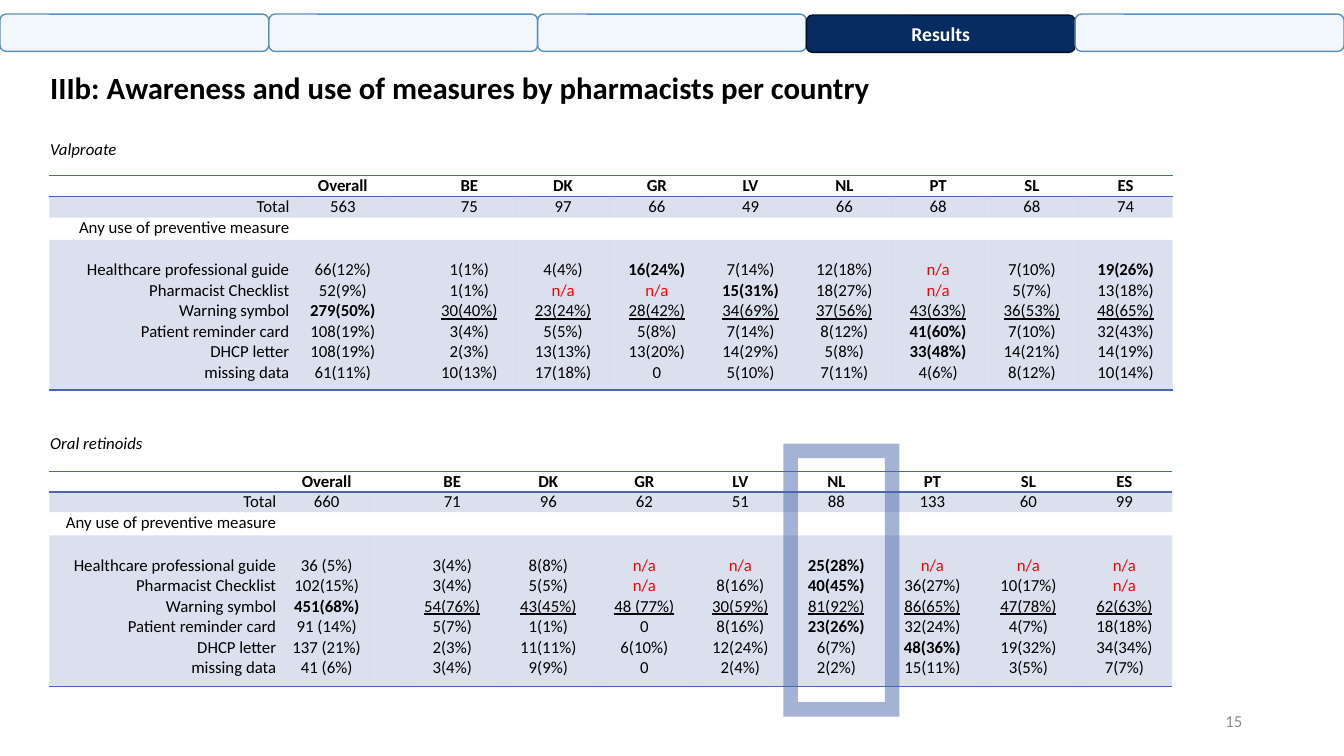
from dataclasses import dataclass
from lxml import etree
from pptx import Presentation
from pptx.dml.color import RGBColor
from pptx.enum.shapes import MSO_SHAPE
from pptx.enum.text import MSO_ANCHOR, PP_ALIGN
from pptx.oxml.ns import qn
from pptx.util import Inches, Pt

LEFT, CENTER, RIGHT = PP_ALIGN.LEFT, PP_ALIGN.CENTER, PP_ALIGN.RIGHT
TOP, MIDDLE = MSO_ANCHOR.TOP, MSO_ANCHOR.MIDDLE
ROUNDED, FRAME = MSO_SHAPE.ROUNDED_RECTANGLE, MSO_SHAPE.FRAME

TITLE = "IIIb: Awareness and use of measures by pharmacists per country"
PAGE = "15"
TABS = ["", "", "", "Results", ""]
GROUPS = ["Overall", "BE", "DK", "GR", "LV", "NL", "PT", "SL", "ES"]
MEASURES = ["Healthcare professional guide", "Pharmacist Checklist", "Warning symbol",
            "Patient reminder card", "DHCP letter", "missing data"]
TOTAL_LABEL, USE_LABEL = "Total", "Any use of preventive measure"
MOST_USED = "Warning symbol"
MISSING = "n/a"
BOLD_MARK = "*"

MEDICINES = [
    {
        "name": "Valproate", "caption_top": 1.33, "table_top": 1.74,
        "lead_columns": [2.45, 0.92, 0.33], "rows": [0.21, 0.21, 0.22, 1.49],
        "totals": ["563", "75", "97", "66", "49", "66", "68", "68", "74"],
        "use": [
            ["66(12%)", "1(1%)", "4(4%)", "*16(24%)", "7(14%)", "12(18%)", "n/a", "7(10%)", "*19(26%)"],
            ["52(9%)", "1(1%)", "n/a", "n/a", "*15(31%)", "18(27%)", "n/a", "5(7%)", "13(18%)"],
            ["*279(50%)", "30(40%)", "23(24%)", "28(42%)", "34(69%)", "37(56%)", "43(63%)", "36(53%)", "48(65%)"],
            ["108(19%)", "3(4%)", "5(5%)", "5(8%)", "7(14%)", "8(12%)", "*41(60%)", "7(10%)", "32(43%)"],
            ["108(19%)", "2(3%)", "13(13%)", "13(20%)", "14(29%)", "5(8%)", "*33(48%)", "14(21%)", "14(19%)"],
            ["61(11%)", "10(13%)", "17(18%)", "0", "5(10%)", "7(11%)", "4(6%)", "8(12%)", "10(14%)"],
        ],
    },
    {
        "name": "Oral retinoids", "caption_top": 4.24, "table_top": 4.68,
        "lead_columns": [2.32, 0.86, 0.34], "rows": [0.2, 0.2, 0.23, 1.5],
        "totals": ["660", "71", "96", "62", "51", "88", "133", "60", "99"],
        "use": [
            ["36 (5%)", "3(4%)", "8(8%)", "n/a", "n/a", "*25(28%)", "n/a", "n/a", "n/a"],
            ["102(15%)", "3(4%)", "5(5%)", "n/a", "8(16%)", "*40(45%)", "36(27%)", "10(17%)", "n/a"],
            ["*451(68%)", "54(76%)", "43(45%)", "48 (77%)", "30(59%)", "81(92%)", "86(65%)", "47(78%)", "62(63%)"],
            ["91 (14%)", "5(7%)", "1(1%)", "0", "8(16%)", "*23(26%)", "32(24%)", "4(7%)", "18(18%)"],
            ["137 (21%)", "2(3%)", "11(11%)", "6(10%)", "12(24%)", "6(7%)", "*48(36%)", "19(32%)", "34(34%)"],
            ["41 (6%)", "3(4%)", "9(9%)", "0", "2(4%)", "2(2%)", "15(11%)", "3(5%)", "7(7%)"],
        ],
    },
]


@dataclass(frozen=True)
class Theme:
    font: str = "Calibri"
    ink: str = "000000"
    white: str = "FFFFFF"
    grey: str = "8C8C8C"
    red: str = "FF0000"
    accent: str = "4A66AC"
    navy: str = "072C62"
    navy_line: str = "031227"
    tab: str = "BAD8F7"
    tab_line: str = "5B8EBD"
    title: int = 22
    tab_text: int = 14
    body: int = 12
    plain_table: str = "{2D5ABB26-0587-4C30-8999-92F81FD0307C}"


THEME = Theme()
WIDTH, HEIGHT = 13.33, 7.5
MARGIN, TABLE_LEFT, TABLE_WIDTH = 0.4, 0.49, 11.14
HEADER, TOTAL, USE_HEADING, USE = range(4)
LINE = 0.2

deck = Presentation()
deck.slide_width, deck.slide_height = Inches(WIDTH), Inches(HEIGHT)
slide = deck.slides.add_slide(deck.slide_layouts[6])


def add_run(paragraph, text, size=THEME.body, color=THEME.ink, align=LEFT,
            bold=False, italic=False, underline=False):
    paragraph.alignment = align
    run = paragraph.add_run()
    run.text = text
    font = run.font
    font.name, font.size = THEME.font, Pt(size)
    font.color.rgb = RGBColor.from_string(color)
    font.bold, font.italic, font.underline = bold, italic, underline


def add_label(text, left, top, width, height, anchor=TOP, spacing=1.0, **style):
    frame = slide.shapes.add_textbox(*map(Inches, (left, top, width, height))).text_frame
    frame.word_wrap = True
    frame.vertical_anchor = anchor
    frame.paragraphs[0].line_spacing = spacing
    add_run(frame.paragraphs[0], text, **style)


def paint(fill, color, opacity=100):
    fill.solid()
    fill.fore_color.rgb = RGBColor.from_string(color)
    if opacity < 100:
        swatch = fill._xPr.find(qn("a:solidFill"))[0]
        etree.SubElement(swatch, qn("a:alpha")).set("val", str(opacity * 1000))


def add_block(kind, left, top, width, height, color, opacity=100, line=None):
    block = slide.shapes.add_shape(kind, *map(Inches, (left, top, width, height)))
    block.shadow.inherit = False
    paint(block.fill, color, opacity)
    if line:
        block.line.color.rgb = RGBColor.from_string(line)
        block.line.width = Pt(1)
    else:
        block.line.fill.background()
    return block


def add_borders(cell, sides):
    properties = cell._tc.get_or_add_tcPr()
    for side in sides:
        border = etree.SubElement(properties, qn("a:" + side), w=str(Pt(1)))
        solid = etree.SubElement(border, qn("a:solidFill"))
        etree.SubElement(solid, qn("a:srgbClr"), val=THEME.accent)


def cell_lines(medicine, row, column):
    if column == 0:
        return [[], [TOTAL_LABEL], [USE_LABEL], MEASURES][row]
    if column == 2 or row == USE_HEADING:
        return []
    group = 0 if column == 1 else column - 2
    if row == USE:
        return [counts[group] for counts in medicine["use"]]
    return [(GROUPS if row == HEADER else medicine["totals"])[group]]


def fill_cell(cell, medicine, row, column):
    cell.margin_left = cell.margin_right = Inches(0.07)
    cell.margin_top = Inches(LINE if row == USE else 0)
    cell.margin_bottom = 0
    add_borders(cell, {HEADER: ["lnT", "lnB"], USE: ["lnB"]}.get(row, []))
    if row in (TOTAL, USE):
        paint(cell.fill, THEME.accent, 20)
    else:
        cell.fill.background()
    frame = cell.text_frame
    lines = cell_lines(medicine, row, column)
    if not lines:
        etree.SubElement(frame.paragraphs[0]._p, qn("a:endParaRPr"), sz=str(THEME.body * 100))
    for index, text in enumerate(lines):
        paragraph = frame.add_paragraph() if index else frame.paragraphs[0]
        add_run(paragraph, text.removeprefix(BOLD_MARK),
                color=THEME.red if text == MISSING else THEME.ink,
                align=CENTER if column else RIGHT,
                bold=row == HEADER or text.startswith(BOLD_MARK),
                underline=row == USE and column > 2 and MEASURES[index] == MOST_USED)


def add_medicine(medicine):
    add_label(medicine["name"], MARGIN, medicine["caption_top"], 1.4, 0.3, italic=True)
    lead, rows = medicine["lead_columns"], medicine["rows"]
    countries = len(GROUPS) - 1
    columns = lead + [(TABLE_WIDTH - sum(lead)) / countries] * countries
    holder = slide.shapes.add_table(len(rows), len(columns), *map(Inches, (
        TABLE_LEFT, medicine["table_top"], TABLE_WIDTH, sum(rows))))
    table = holder.table
    table.first_row = table.horz_banding = False
    next(table._tbl.iter(qn("a:tableStyleId"))).text = THEME.plain_table
    for column, width in enumerate(columns):
        table.columns[column].width = Inches(width)
    for row, height in enumerate(rows):
        table.rows[row].height = Inches(height)
        for column in range(len(columns)):
            fill_cell(table.cell(row, column), medicine, row, column)


def add_tab(index, name):
    width = WIDTH / len(TABS)
    box = (ROUNDED, index * width, 0.15 if name else 0.14, width, 0.37)
    if not name:
        add_block(*box, THEME.tab, 20, THEME.tab_line)
        return
    tab = add_block(*box, THEME.navy, line=THEME.navy_line)
    tab.text_frame.vertical_anchor = MIDDLE
    add_run(tab.text_frame.paragraphs[0], name, THEME.tab_text, THEME.white, CENTER, bold=True)


add_label(TITLE, MARGIN, 0.16, 11.5, 1.45, MIDDLE, 0.9, size=THEME.title, bold=True)
add_label(PAGE, 9.42, 6.95, 3, 0.4, MIDDLE, color=THEME.grey, align=RIGHT)
for medicine in MEDICINES:
    add_medicine(medicine)
for index, name in enumerate(TABS):
    add_tab(index, name)
add_block(FRAME, 7.77, 4.4, 1.15, 2.71, THEME.accent, 50)

deck.save("out.pptx")
